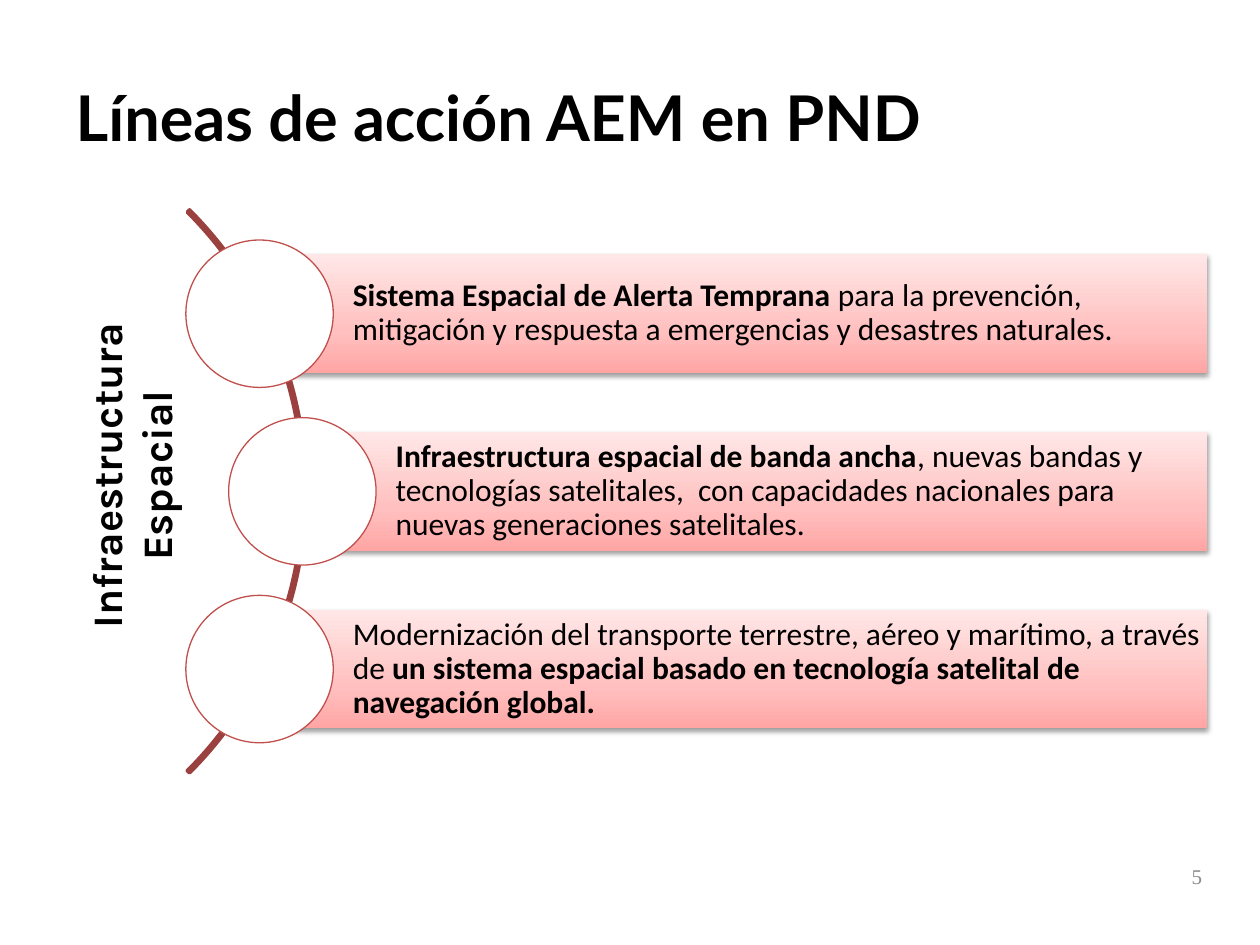
import pptx
import pptx.util
import pptx.oxml
from pptx.dml.color import RGBColor
from pptx.enum.shapes import MSO_SHAPE
from pptx.enum.text import MSO_ANCHOR, PP_ALIGN
from pptx.util import Inches, Pt

COLORS = {
    "text": "000000",
    "number": "8C8C8C",
    "arc": "9A403E",
    "ring": "C0504D",
    "circle": "FFFFFF",
    "bar_low": "FFA6A5",
    "bar_middle": "FFC0BF",
    "bar_high": "FFE7E7",
}
NAMESPACE = 'xmlns:a="http://schemas.openxmlformats.org/drawingml/2006/main"'
BAR_RIGHT = 9.58
BAR_HEIGHT = 0.94
CIRCLE_SIZE = 1.17
FIRST_CENTER = 2.49
CENTER_STEP = 1.41

ACTIONS = [
    (2.06, [
        ("Sistema Espacial de Alerta Temprana ", True),
        ("para la prevención, mitigación y respuesta a emergencias y desastres naturales.", False),
    ]),
    (2.4, [
        ("Infraestructura espacial de banda ancha", True),
        (", nuevas bandas y tecnologías satelitales,  con capacidades nacionales "
         "para nuevas generaciones satelitales.", False),
    ]),
    (2.06, [
        ("Modernización del transporte terrestre, aéreo y marítimo, a través de ", False),
        ("un sistema espacial basado en tecnología satelital de navegación global.", True),
    ]),
]


def color(name):
    return RGBColor.from_string(COLORS[name])


def style_span(span, font, size, bold=False, color_name="text"):
    span.font.name = font
    span.font.size = Pt(size)
    span.font.bold = bold
    span.font.color.rgb = color(color_name)


def add_title(page, text):
    title = page.shapes.title
    title.left, title.top = Inches(0.5), Inches(0.3)
    title.width, title.height = Inches(9), Inches(1.25)
    frame = title.text_frame
    frame.text = text
    frame.vertical_anchor = MSO_ANCHOR.MIDDLE
    para = frame.paragraphs[0]
    para.alignment = PP_ALIGN.LEFT
    style_span(para.runs[0], "Lato", 36, True)


def add_label(page, place, text, align, font, size, bold, color_name):
    box = page.shapes.add_textbox(*[Inches(length) for length in place])
    frame = box.text_frame
    frame.word_wrap = True
    para = frame.paragraphs[0]
    para.text = text
    para.alignment = align
    style_span(para.runs[0], font, size, bold, color_name)
    return frame


def add_outlined(page, kind, left, top, size, line_name, line_width):
    shape = page.shapes.add_shape(
        kind, Inches(left), Inches(top), Inches(size), Inches(size))
    shape.shadow.inherit = False
    shape.line.color.rgb = color(line_name)
    shape.line.width = Pt(line_width)
    return shape


def add_arc(page):
    arc = add_outlined(page, MSO_SHAPE.BLOCK_ARC, -3.89, 0.74, 6.32, "arc", 2)
    arc.fill.background()
    for index, value in enumerate((189, 27, 0.004)):
        arc.adjustments[index] = value


def paint_bar(bar):
    bar.line.fill.background()
    bar.shadow.inherit = False
    stops = "".join(
        f'<a:gs pos="{position * 1000}"><a:srgbClr val="{COLORS[name]}"/></a:gs>'
        for position, name in ((0, "bar_low"), (35, "bar_middle"), (100, "bar_high")))
    gradient = pptx.oxml.parse_xml(
        f'<a:gradFill {NAMESPACE} rotWithShape="1"><a:gsLst>{stops}</a:gsLst>'
        '<a:lin ang="16200000" scaled="1"/></a:gradFill>')
    shadow = pptx.oxml.parse_xml(
        f'<a:outerShdw {NAMESPACE} blurRad="{Pt(3.1)}" dist="{Pt(1.6)}" dir="5400000" '
        f'rotWithShape="0"><a:srgbClr val="{COLORS["text"]}"><a:alpha val="38000"/>'
        '</a:srgbClr></a:outerShdw>')
    properties = bar.element.spPr
    properties.find(pptx.oxml.ns.qn("a:ln")).addprevious(gradient)
    properties.find(pptx.oxml.ns.qn("a:effectLst")).append(shadow)


def add_bar(page, left, center, parts):
    bar = page.shapes.add_shape(
        MSO_SHAPE.RECTANGLE, Inches(left), Inches(center - BAR_HEIGHT / 2),
        Inches(BAR_RIGHT - left), Inches(BAR_HEIGHT))
    paint_bar(bar)
    frame = bar.text_frame
    frame.word_wrap = True
    frame.vertical_anchor = MSO_ANCHOR.MIDDLE
    frame.margin_left = Inches(0.74)
    frame.margin_top = frame.margin_right = frame.margin_bottom = Inches(0.05)
    para = frame.paragraphs[0]
    para.alignment = PP_ALIGN.LEFT
    para.line_spacing = 0.9
    for text, bold in parts:
        span = para.add_run()
        span.text = text
        style_span(span, "Calibri", 18, bold)


def add_circle(page, bar_left, center):
    circle = add_outlined(
        page, MSO_SHAPE.OVAL, bar_left - CIRCLE_SIZE / 2, center - CIRCLE_SIZE / 2,
        CIRCLE_SIZE, "ring", 0.75)
    circle.fill.solid()
    circle.fill.fore_color.rgb = color("circle")


def main():
    deck = pptx.Presentation()
    deck.slide_width, deck.slide_height = Inches(10), Inches(7.5)
    page = deck.slides.add_slide(deck.slide_layouts[5])
    add_title(page, "Líneas de acción AEM en PND")
    number = add_label(page, (7.31, 6.75, 2.33, 0.4), "5", PP_ALIGN.RIGHT,
                       "Times New Roman", 12, False, "number")
    number.vertical_anchor = MSO_ANCHOR.MIDDLE
    add_arc(page)
    for index, (left, parts) in enumerate(ACTIONS):
        center = FIRST_CENTER + index * CENTER_STEP
        add_bar(page, left, center, parts)
        add_circle(page, left, center)
    topic = add_label(page, (0.59, 2.22, 1.01, 3.11), "Infraestructura Espacial",
                      PP_ALIGN.CENTER, "Karla", 24, True, "text")
    topic._txBody.bodyPr.set("vert", "vert270")
    deck.save("out.pptx")


if __name__ == "__main__":
    main()
